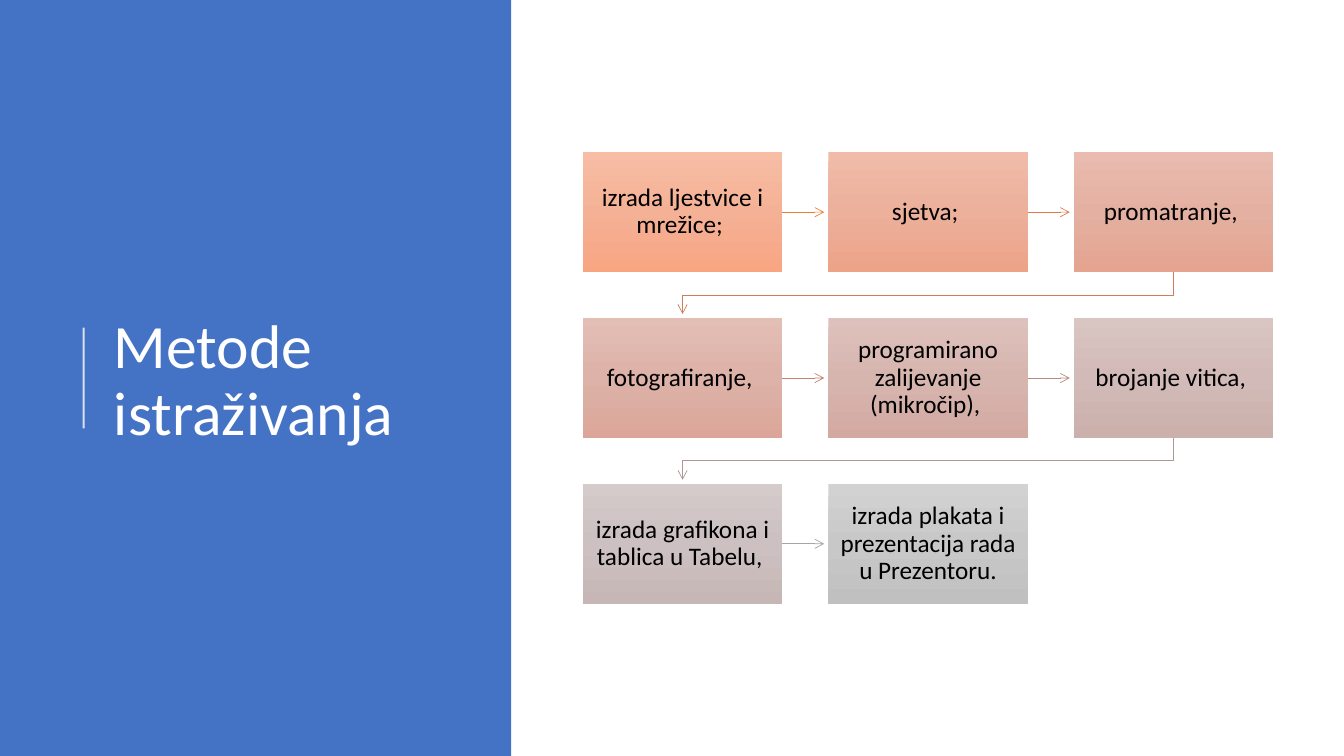
from copy import deepcopy

from lxml import etree
from pptx import Presentation, util as u
from pptx.dml.color import RGBColor
from pptx.enum import shapes, text
from pptx.oxml import ns

BLUE = RGBColor(0x44, 0x72, 0xC4)
WHITE = RGBColor(0xFF, 0xFF, 0xFF)
BLACK = RGBColor(0x00, 0x00, 0x00)

# Each step: wording, gradient from top to bottom, colour of the arrow to the next
STEPS = [
    ("izrada ljestvice i mrežice; ", "F7BDA5 F5B196 F8A582", "ED7D31"),
    ("sjetva; ", "F0BCA9 ECB09B EDA388", "DE7A47"),
    ("promatranje, ", "E9BCAF E4B0A1 E4A490", "D17B5C"),
    ("fotografiranje, ", "E3BEB5 DDB2A8 DBA699", "C48170"),
    ("programirano zalijevanje (mikročip), ", "DEC1BC D7B5AF D3AAA2", "B98A82"),
    ("brojanje vitica, ", "D9C6C3 D1BAB7 CCB0AC", "AE9694"),
    ("izrada grafikona i tablica u Tabelu, ", "D5CBCA CCC0C0 C6B7B6", "A5A5A5"),
    ("izrada plakata i prezentacija rada u Prezentoru.", "D2D2D2 C8C8C8 C0C0C0", None),
]

# Grid of the steps, in inches
COLS = 3
LEFT, TOP = 5.78, 1.51
WIDE, HIGH = 1.98, 1.19
STEP_X, STEP_Y = 4.87 / 2, 3.29 / 2
GAP = 0.04  # between an arrow's tip and the next box


def style_line(line, color, width, arrow=False):
    """Colour a line or open outline, drop its shadow, add an arrowhead."""
    line.line.color.rgb = color
    line.line.width = u.Pt(width)
    props = line.element.spPr
    if arrow:
        etree.SubElement(props.find(ns.qn("a:ln")), ns.qn("a:tailEnd"), type="arrow")
    etree.SubElement(props, ns.qn("a:effectLst"))


def style_text(frame, size, color, align):
    """Format the only paragraph of a frame."""
    frame.word_wrap = True
    frame.auto_size = text.MSO_AUTO_SIZE.NONE
    frame.vertical_anchor = text.MSO_ANCHOR.MIDDLE
    para = frame.paragraphs[0]
    para.alignment = align
    para.line_spacing = 0.9
    font = para.runs[0].font
    font.name, font.size, font.color.rgb = "Calibri", u.Pt(size), color


deck = Presentation()
deck.slide_width, deck.slide_height = u.Inches(13.33), u.Inches(7.5)
slide = deck.slides.add_slide(deck.slide_layouts[5])
items = slide.shapes

# Blue panel, behind the title
panel = items.add_shape(shapes.MSO_SHAPE.RECTANGLE, 0, 0,
                        u.Inches(5.07), deck.slide_height)
panel.shadow.inherit = False
panel.fill.solid()
panel.fill.fore_color.rgb = BLUE
panel.line.fill.background()
items.title.element.addprevious(panel.element)

# Title and the thin rule beside it
title = items.title
title.left, title.top = u.Inches(1.03), u.Inches(0.78)
title.width, title.height = u.Inches(3.69), u.Inches(6.02)
title.text_frame.text = "Metode istraživanja"
style_text(title.text_frame, 44, WHITE, text.PP_ALIGN.LEFT)

rule = items.add_connector(shapes.MSO_CONNECTOR.STRAIGHT, u.Inches(0.83),
                           u.Inches(4.25), u.Inches(0.83), u.Inches(3.25))
style_line(rule, WHITE, 1.5)
tint = rule.element.spPr.find(".//" + ns.qn("a:srgbClr"))
etree.SubElement(tint, ns.qn("a:alpha"), val="80000")

# Steps, each with the arrow to the next one
for i, (words, shades, hue) in enumerate(STEPS):
    row, col = divmod(i, COLS)
    x, y = LEFT + col * STEP_X, TOP + row * STEP_Y
    box = items.add_shape(shapes.MSO_SHAPE.RECTANGLE, u.Inches(x), u.Inches(y),
                          u.Inches(WIDE), u.Inches(HIGH))
    box.shadow.inherit = False
    box.line.fill.background()

    # Three-stop gradient running downwards
    box.fill.gradient()
    box.fill.gradient_angle = 270
    stops = box.element.spPr.find(".//" + ns.qn("a:gsLst"))
    stops.insert(1, deepcopy(stops[0]))
    for n, (stop, shade) in enumerate(zip(box.fill.gradient_stops, shades.split())):
        stop.position = n / 2
        stop.color.rgb = RGBColor.from_string(shade)

    frame = box.text_frame
    frame.text = words
    frame.margin_left = frame.margin_right = u.Inches(0.1)
    frame.margin_top = frame.margin_bottom = u.Inches(0.1)
    style_text(frame, 18, BLACK, text.PP_ALIGN.CENTER)

    if hue is None:
        continue
    if col < COLS - 1:
        mid = u.Inches(y + HIGH / 2)
        arrow = items.add_connector(shapes.MSO_CONNECTOR.STRAIGHT, u.Inches(x + WIDE),
                                    mid, u.Inches(x + STEP_X - GAP), mid)
        arrow.begin_connect(box, 3)
    else:
        # From the end of this row back to the start of the next
        start, end = u.Inches(x + WIDE / 2), u.Inches(LEFT + WIDE / 2)
        turn = u.Inches(y + (HIGH + STEP_Y) / 2)
        pen = items.build_freeform(start, u.Inches(y + HIGH))
        pen.add_line_segments([(start, turn), (end, turn),
                               (end, u.Inches(y + STEP_Y - GAP))], close=False)
        arrow = pen.convert_to_shape()
        arrow.fill.background()
    style_line(arrow, RGBColor.from_string(hue), 0.5, arrow=True)

deck.save("out.pptx")
